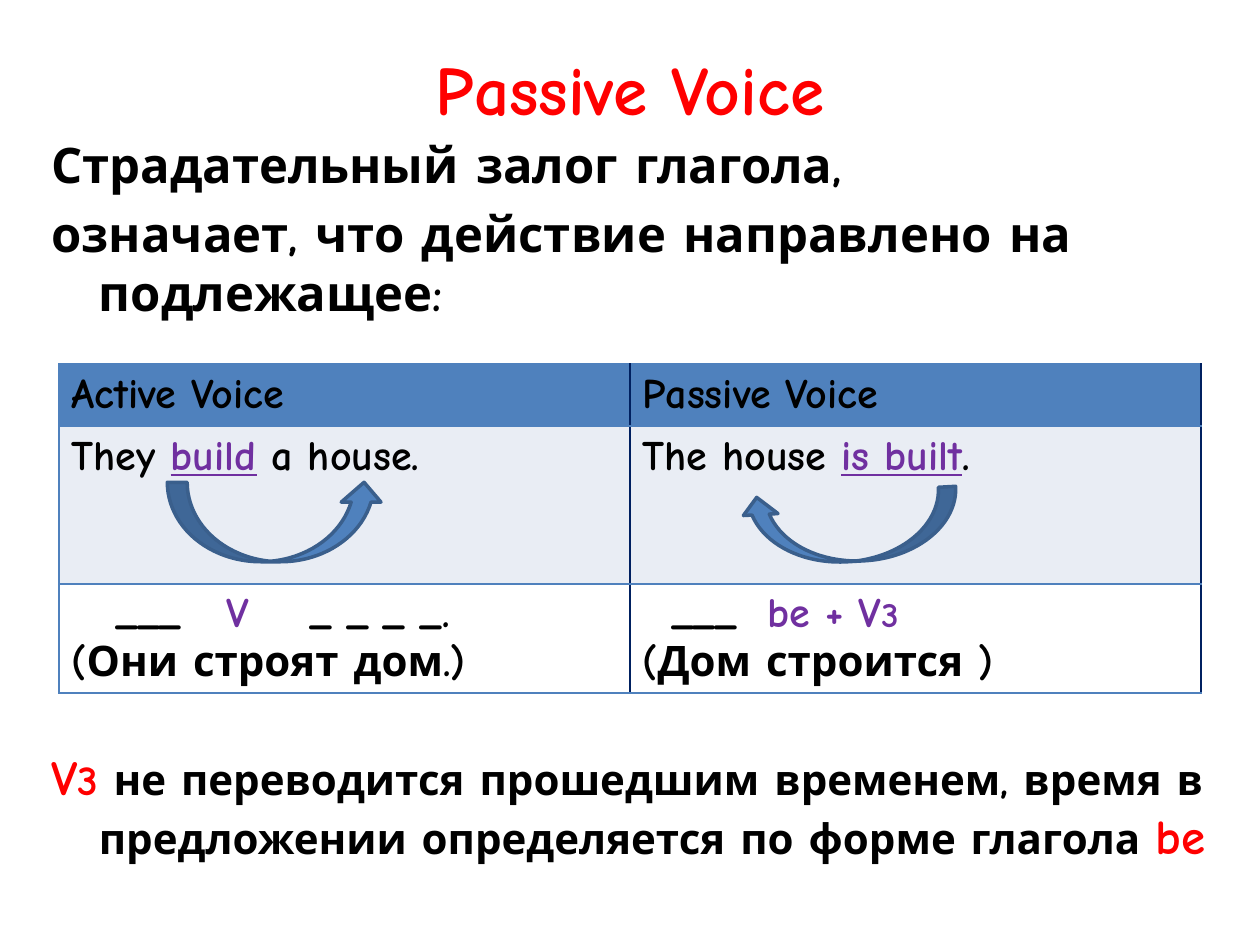
from dataclasses import dataclass

from lxml.etree import SubElement
from pptx import Presentation
from pptx.dml.color import RGBColor
from pptx.enum.shapes import MSO_SHAPE
from pptx.enum.text import MSO_ANCHOR, MSO_AUTO_SIZE, PP_ALIGN
from pptx.oxml.ns import qn
from pptx.util import Pt


@dataclass(frozen=True)
class Theme:
    font: str = "Comic Neue"
    black: str = "000000"
    red: str = "FF0000"
    purple: str = "7030A0"
    blue: str = "4F81BD"
    navy: str = "002060"
    outline: str = "3A5F8C"
    band: str = "E9EDF4"
    white: str = "FFFFFF"
    title: float = 39.6
    body: int = 28
    text: int = 24
    small: int = 20


T = Theme()


def rgb(value):
    return RGBColor.from_string(value)


def add_text(p, text, size=T.text, color=T.black, underline=False, spacing=0):
    r = p.add_run()
    r.text = text
    r.font.name, r.font.size, r.font.bold = T.font, Pt(size), True
    r.font.underline = underline
    r.font.color.rgb = rgb(color)
    if spacing:
        r.font._element.set("spc", str(round(spacing * 100)))


def place(sp, left, top, width, height):
    sp.left, sp.top, sp.width, sp.height = map(Pt, (left, top, width, height))


def add_paragraph(tf, runs, first=False):
    """Add one paragraph from (text, format) pairs."""
    p = tf.paragraphs[0] if first else tf.add_paragraph()
    for text, style in runs:
        add_text(p, text, **style)
    return p


def set_indent(p, margin, indent):
    pPr = p._p.get_or_add_pPr()
    pPr.set("marL", str(Pt(margin)))
    pPr.set("indent", str(Pt(indent)))
    SubElement(pPr, qn("a:buNone"))


def fill_title(sp):
    place(sp, 36, 21.6, 648, 56.9)
    tf = sp.text_frame
    tf.auto_size, tf.vertical_anchor = MSO_AUTO_SIZE.NONE, MSO_ANCHOR.MIDDLE
    p = add_paragraph(tf, [("Passive Voice", dict(size=T.title, color=T.red))], first=True)
    p.alignment = PP_ALIGN.CENTER


def fill_body(sp):
    place(sp, 22.3, 73.4, 680.4, 433.4)
    tf = sp.text_frame
    tf.auto_size = MSO_AUTO_SIZE.NONE
    big = dict(size=T.body)
    big_red = dict(size=T.body, color=T.red)
    # Each paragraph: space before, runs; the last one clears the table
    paragraphs = [
        (5.6, [("Страдательный залог глагола,", big)]),
        (5.6, [("означает, что действие направлено на подлежащее:", big)]),
        (243, [("V", big_red), ("3 ", dict(color=T.red)),
               ("не переводится прошедшим временем, время в предложении "
                "определяется по форме глагола ", {}),
               ("be", big_red)]),
    ]
    for i, (before, runs) in enumerate(paragraphs):
        p = add_paragraph(tf, runs, first=i == 0)
        p.space_before, p.line_spacing = Pt(before), 1.0
        set_indent(p, 27, -27)


def set_borders(cell, **sides):
    tcPr = cell._tc.get_or_add_tcPr()
    for i, (side, color) in enumerate(sides.items()):
        ln = SubElement(tcPr, qn(f"a:ln{side}"), w=str(Pt(1)))
        SubElement(SubElement(ln, qn("a:solidFill")), qn("a:srgbClr"), val=color)
        tcPr.remove(ln)
        tcPr.insert(i, ln)


def add_voice_table(s):
    verb = dict(color=T.purple, underline=True)
    purple = dict(color=T.purple)

    def gap(extra):
        return " ", dict(spacing=extra)

    # Each cell is a list of paragraphs, each paragraph a list of runs
    rows = [
        (35.4, T.blue, [[[("Active Voice", {})]], [[("Passive Voice", {})]]]),
        (90.2, T.band, [
            [[("They ", {}), ("build", verb), (" a house.", {})]],
            [[("The house ", {}), ("is built", verb), (".", {})]]]),
        (62.3, T.white, [
            [[("___", {}), gap(17.5), ("V", purple), gap(26.3), ("_ _ _ _.", {})],
             [("(Они строят дом.)", {})]],
            [[("___", {}), gap(8.8), ("be + V", purple),
              ("3", dict(size=T.small, color=T.purple))],
             [("(Дом строится )", {})]]]),
    ]
    pattern_indents = (25.5, 17)

    table = s.shapes.add_table(3, 2, Pt(33.8), Pt(208), Pt(652.4), Pt(187.9)).table
    for r, (height, fill, cells) in enumerate(rows):
        table.rows[r].height = Pt(height)
        for c, paragraphs in enumerate(cells):
            cell = table.cell(r, c)
            cell.fill.solid()
            cell.fill.fore_color.rgb = rgb(fill)
            set_borders(cell, L=T.navy if c else T.blue, R=T.navy, T=T.blue, B=T.blue)
            for i, runs in enumerate(paragraphs):
                add_paragraph(cell.text_frame, runs, first=i == 0)
            if len(paragraphs) > 1:
                set_indent(cell.text_frame.paragraphs[0], 0, pattern_indents[c])


def add_arrow(s, kind, left, top, width, height, rotation=0):
    sp = s.shapes.add_shape(kind, Pt(left), Pt(top), Pt(width), Pt(height))
    sp.rotation = rotation
    sp.shadow.inherit = False
    sp.fill.solid()
    sp.fill.fore_color.rgb = rgb(T.blue)
    sp.line.color.rgb = rgb(T.outline)
    sp.line.width = Pt(2)


def main():
    prs = Presentation()
    prs.slide_width, prs.slide_height = Pt(720), Pt(540)
    s = prs.slides.add_slide(prs.slide_layouts[1])

    # Heading and explanation
    fill_title(s.shapes.title)
    fill_body(s.placeholders[1])

    # Comparison of the two voices
    add_voice_table(s)

    # Arrows showing where the action is directed
    add_arrow(s, MSO_SHAPE.CURVED_UP_ARROW, 95.6, 275.6, 123.8, 45.4)
    add_arrow(s, MSO_SHAPE.CURVED_LEFT_ARROW, 465.6, 239.2, 39.6, 123.8, rotation=86.8)

    prs.save("out.pptx")


if __name__ == "__main__":
    main()
